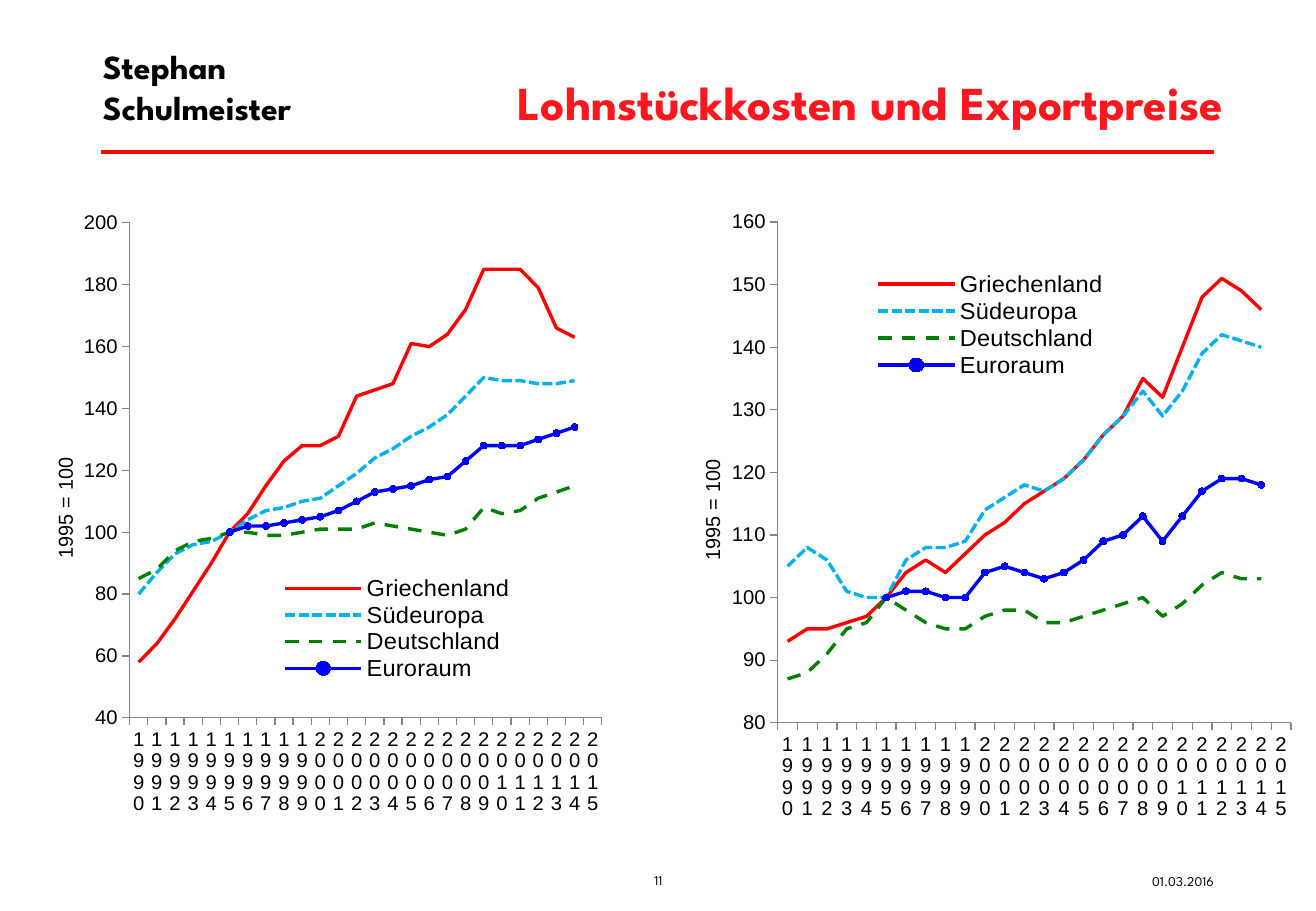
import pptx
import pptx.chart.data
import pptx.dml.color
import pptx.enum.chart
import pptx.enum.dml
import pptx.enum.shapes
import pptx.enum.text
import pptx.oxml
import pptx.oxml.ns
import pptx.util

RGB = pptx.dml.color.RGBColor
Pt = pptx.util.Pt
DASH = pptx.enum.dml.MSO_LINE
ALIGN = pptx.enum.text.PP_ALIGN
ANCHOR = pptx.enum.text.MSO_ANCHOR
ENUM = pptx.enum.chart

BLACK = RGB(0x00, 0x00, 0x00)
GREY = RGB(0x86, 0x86, 0x86)
RED = RGB(0xFF, 0x00, 0x00)
TITLE = RGB(0xFF, 0x17, 0x20)
SKY = RGB(0x00, 0xB0, 0xF0)
GREEN = RGB(0x00, 0x80, 0x00)
BLUE = RGB(0x00, 0x00, 0xFF)

# Content: text, box (px), size, bold, colour, alignment, anchor, inset
TEXTS = [
    ("Stephan Schulmeister", (91, 40, 243, 94), 20, True, BLACK, ALIGN.LEFT, ANCHOR.TOP, True),
    ("Lohnstückkosten und Exportpreise", (462, 26, 773, 152), 28, True, TITLE,
     ALIGN.RIGHT, ANCHOR.MIDDLE, True),
    ("11", (621, 872, 75, 16), 8, False, BLACK, ALIGN.CENTER, ANCHOR.TOP, False),
    ("01.03.2016", (1126, 867, 100, 28), 8, False, BLACK, ALIGN.RIGHT, ANCHOR.MIDDLE, True),
]
RULE = (101, 152, 1214, 152)
YEARS = [str(year) for year in range(1990, 2016)]
LINES = [
    ("Griechenland", RED, DASH.SOLID),
    ("Südeuropa", SKY, DASH.SQUARE_DOT),
    ("Deutschland", GREEN, DASH.DASH),
    ("Euroraum", BLUE, DASH.SOLID),
]
GAP = [None] * 5  # Euroraum starts in 1995
CHARTS = [
    {
        "box": (49, 205, 576, 609), "scale": (40, 200, 20),
        "legend": (0.4, 0.62, 0.41, 0.18), "label": (0, 0.42),
        "rows": [
            [58, 64, 72, 81, 90, 100, 106, 115, 123, 128, 128, 131, 144,
             146, 148, 161, 160, 164, 172, 185, 185, 185, 179, 166, 163],
            [80, 87, 93, 96, 97, 100, 104, 107, 108, 110, 111, 115, 119,
             124, 127, 131, 134, 138, 144, 150, 149, 149, 148, 148, 149],
            [85, 88, 94, 97, 98, 100, 100, 99, 99, 100, 101, 101, 101,
             103, 102, 101, 100, 99, 101, 108, 106, 107, 111, 113, 115],
            GAP + [100, 102, 102, 103, 104, 105, 107, 110, 113, 114,
                   115, 117, 118, 123, 128, 128, 128, 130, 132, 134],
        ],
    },
    {
        "box": (690, 204, 626, 615), "scale": (80, 160, 10),
        "legend": (0.29, 0.11, 0.38, 0.18), "label": (0.01, 0.42),
        "rows": [
            [93, 95, 95, 96, 97, 100, 104, 106, 104, 107, 110, 112, 115,
             117, 119, 122, 126, 129, 135, 132, 140, 148, 151, 149, 146],
            [105, 108, 106, 101, 100, 100, 106, 108, 108, 109, 114, 116, 118,
             117, 119, 122, 126, 129, 133, 129, 133, 139, 142, 141, 140],
            [87, 88, 91, 95, 96, 100, 98, 96, 95, 95, 97, 98, 98,
             96, 96, 97, 98, 99, 100, 97, 99, 102, 104, 103, 103],
            GAP + [100, 101, 101, 100, 100, 104, 105, 104, 103, 104,
                   106, 109, 110, 113, 109, 113, 117, 119, 119, 118],
        ],
    },
]
PLOT = (0.14, 0.03, 0.82, 0.83)


def px(*values):
    return [round(value * 914400 / 121.5) for value in values]


def place(node, spot, index, inner=False):
    """Give a chart part a fixed spot, in shares of the chart."""
    for old in node.findall(pptx.oxml.ns.qn("c:layout")):
        node.remove(old)
    tags = '<c:layoutTarget val="inner"/>' if inner else ""
    tags += '<c:xMode val="edge"/><c:yMode val="edge"/>'
    tags += "".join(f'<c:{key} val="{val}"/>' for key, val in zip("xywh", spot))
    node.insert(index, pptx.oxml.parse_xml(
        f'<c:layout {pptx.oxml.ns.nsdecls("c")}><c:manualLayout>{tags}'
        "</c:manualLayout></c:layout>"))


def add_text(slide, text, box, size, bold, color, align, anchor, inset):
    frame = slide.shapes.add_textbox(*px(*box)).text_frame
    frame.word_wrap = True
    frame.vertical_anchor = anchor
    if not inset:
        frame.margin_left = frame.margin_right = 0
        frame.margin_top = frame.margin_bottom = 0
    frame.text = text
    para = frame.paragraphs[0]
    para.alignment = align
    font = para.runs[0].font
    font.name, font.size, font.bold = "League Spartan", Pt(size), bold
    font.color.rgb = color


def set_font(font, size):
    font.name, font.size, font.bold = "Arial", Pt(size), False
    font.color.rgb = BLACK


def add_chart(slide, item):
    data = pptx.chart.data.CategoryChartData(number_format="0")
    data.categories = YEARS
    for (name, _, _), row in zip(LINES, item["rows"]):
        data.add_series(name, row + [None])
    chart = slide.shapes.add_chart(
        ENUM.XL_CHART_TYPE.LINE_MARKERS, *px(*item["box"]), data).chart
    chart.has_title = False
    set_font(chart.font, 12)
    chart.plots[0].vary_by_categories = False

    # Series
    for series, (name, color, dash) in zip(chart.plots[0].series, LINES):
        series.smooth = False
        line, marker = series.format.line, series.marker
        line.color.rgb, line.width, line.dash_style = color, Pt(2), dash
        marker.style = ENUM.XL_MARKER_STYLE.NONE
        if name == "Euroraum":
            marker.style, marker.size = ENUM.XL_MARKER_STYLE.CIRCLE, 4
            marker.format.fill.solid()
            marker.format.fill.fore_color.rgb = color
            marker.format.line.color.rgb = color

    # Axes
    years, index = chart.category_axis, chart.value_axis
    for axis in (years, index):
        axis.has_major_gridlines = False
        axis.major_tick_mark = ENUM.XL_TICK_MARK.OUTSIDE
        axis.format.line.color.rgb = GREY
        set_font(axis.tick_labels.font, 12)
    years.tick_label_position = ENUM.XL_TICK_LABEL_POSITION.LOW
    body = years._element.find(".//" + pptx.oxml.ns.qn("a:bodyPr"))
    body.set("rot", "0")
    body.set("vert", "horz")
    index.minimum_scale, index.maximum_scale, index.major_unit = item["scale"]
    index.tick_labels.number_format = "0"
    index.tick_labels.number_format_is_linked = False
    frame = index.axis_title.text_frame
    frame.text = "1995 = 100"
    set_font(frame.paragraphs[0].runs[0].font, 12)
    frame._txBody.bodyPr.set("rot", "-5400000")
    frame._txBody.bodyPr.set("vert", "horz")

    # Legend and layout
    chart.has_legend = True
    chart.legend.position = ENUM.XL_LEGEND_POSITION.RIGHT
    chart.legend.include_in_layout = False
    set_font(chart.legend.font, 14)
    place(chart._chartSpace.chart.plotArea, PLOT, 0, inner=True)
    place(chart.legend._element, item["legend"], 1)
    place(index.axis_title._element, item["label"], 1)


def main():
    deck = pptx.Presentation()
    deck.slide_width, deck.slide_height = px(1316, 911)
    slide = deck.slides.add_slide(deck.slide_layouts[6])

    # Header rule
    rule = slide.shapes.add_connector(
        pptx.enum.shapes.MSO_CONNECTOR.STRAIGHT, *px(*RULE))
    rule.line.color.rgb, rule.line.width = RED, Pt(2.25)
    rule._element.spPr.append(pptx.oxml.parse_xml(
        f'<a:effectLst {pptx.oxml.ns.nsdecls("a")}/>'))

    for text in TEXTS:
        add_text(slide, *text)
    for item in CHARTS:
        add_chart(slide, item)
    deck.save("out.pptx")


if __name__ == "__main__":
    main()
